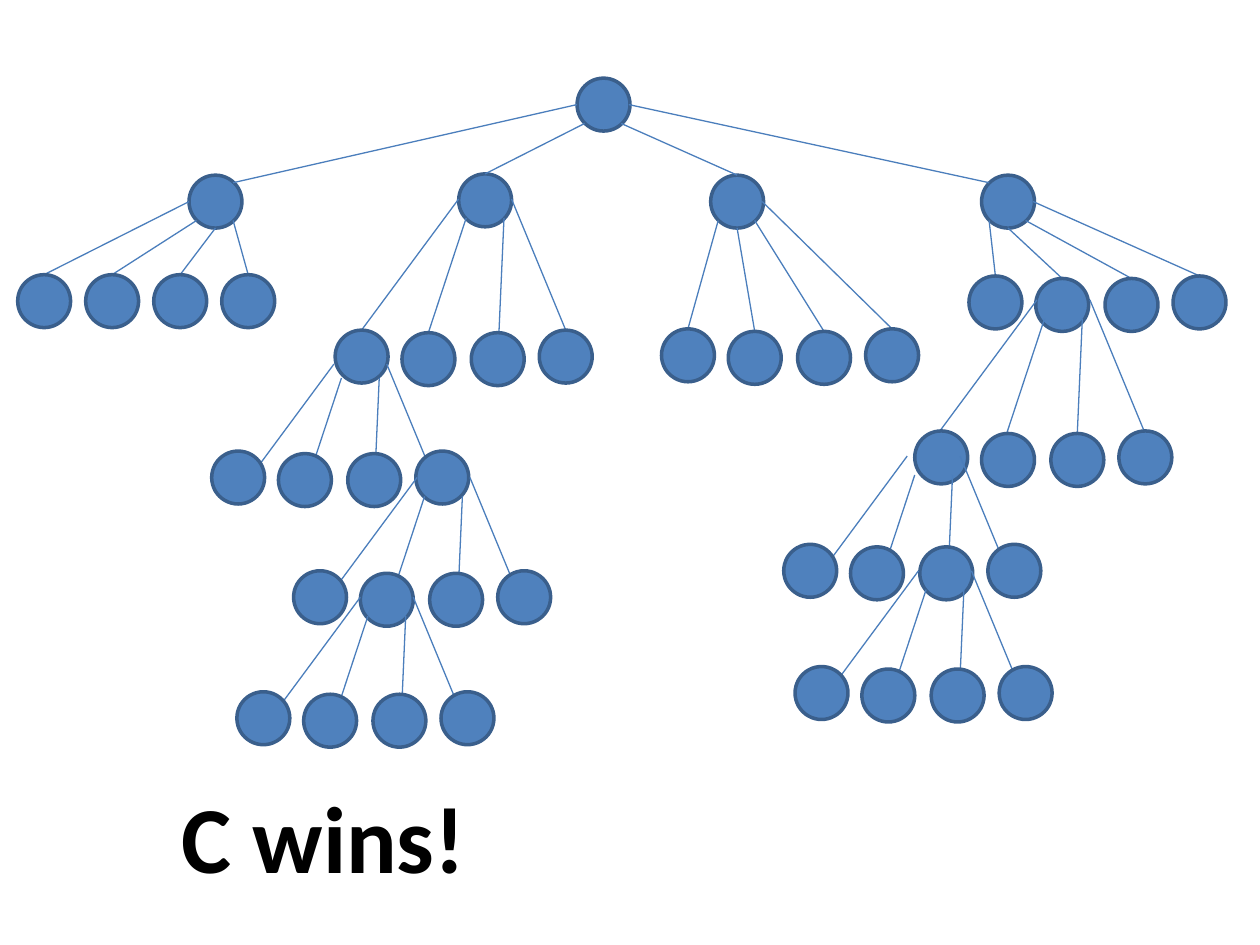
from lxml import etree
from pptx import Presentation
from pptx.dml.color import RGBColor
from pptx.enum.shapes import MSO_CONNECTOR, MSO_SHAPE
from pptx.enum.text import MSO_AUTO_SIZE
from pptx.oxml.ns import qn
from pptx.util import Pt

OVAL = MSO_SHAPE.OVAL
LINE = MSO_CONNECTOR.STRAIGHT
GROW = MSO_AUTO_SIZE.SHAPE_TO_FIT_TEXT

PX = 9144  # 100 px to the inch
SIZE = 42

# Points on a node's rim, from its top left corner
TOP, TOP_L, TOP_R = (21, 0), (6, 6), (35, 6)
LEFT, LOW_L, LOW, LOW_R, RIGHT = (0, 21), (6, 36), (21, 42), (35, 36), (41, 21)

ROOT = (458, 62)
HEADS = [(150, 139), (364, 138), (564, 139), (779, 139)]
FIRST = [(14, 218), (266, 262), (525, 261), (769, 219)]

# Start of a fan, drop of its inner lines, first node of the row below
DEEP = [
    ((265, 289), 11, (168, 358)),
    ((331, 379), 15, (233, 453)),
    ((286, 474), 15, (188, 549)),
    ((823, 238), 15, (726, 342)),
    ((720, 362), 15, (622, 432)),
    ((729, 453), 15, (631, 529)),
]


def hue(code):
    return RGBColor.from_string(code)


def shift(spot, step):
    return spot[0] + step[0], spot[1] + step[1]


def even(spot):
    return [shift(spot, (54 * i, 0)) for i in range(4)]


def wavy(spot):
    """Four nodes with the middle pair set a little lower."""
    return [shift(spot, step) for step in ((0, 0), (53, 2), (108, 2), (162, 0))]


class Board:
    FILL, RIM, EDGE, INK = "4F81BD", "3A5F8C", "4B7EBC", "000000"
    FONT = "Calibri"

    def __init__(self, slide):
        self.shapes = slide.shapes

    def node(self, spot):
        x, y = spot
        dot = self.shapes.add_shape(OVAL, x * PX, y * PX, SIZE * PX, SIZE * PX)
        dot.shadow.inherit = False
        dot.fill.solid()
        dot.fill.fore_color.rgb = hue(self.FILL)
        dot.line.color.rgb = hue(self.RIM)
        dot.line.width = Pt(2)

    def row(self, spots):
        for spot in spots:
            self.node(spot)

    def edge(self, start, end):
        ends = [value * PX for value in start + end]
        line = self.shapes.add_connector(LINE, *ends)
        line.line.color.rgb = hue(self.EDGE)
        line.line.width = Pt(0.75)
        etree.SubElement(line._element.spPr, qn("a:effectLst"))

    def link(self, head, sites, kids):
        """Lines from points on the head to the tops of its children."""
        for site, kid in zip(sites, kids):
            self.edge(shift(head, site), shift(kid, TOP))

    def fan(self, start, drop):
        """Four lines below a node: a wide outer pair and an inner pair."""
        for begin, move in (
            ((0, 0), (-77, 104)),
            ((6, drop), (-30, 91)),
            ((42, 0), (43, 104)),
            ((36, drop), (-4, 91)),
        ):
            spot = shift(start, begin)
            self.edge(spot, shift(spot, move))

    def label(self, x, y, wide, high, text, size):
        frame = self.shapes.add_textbox(x * PX, y * PX, wide * PX, high * PX).text_frame
        frame.word_wrap = True
        frame.auto_size = GROW
        frame.text = text
        font = frame.paragraphs[0].runs[0].font
        font.name, font.size, font.bold = self.FONT, Pt(size), True
        font.color.rgb = hue(self.INK)


def main():
    deck = Presentation()
    deck.slide_width, deck.slide_height = 1000 * PX, 750 * PX
    board = Board(deck.slides.add_slide(deck.slide_layouts[6]))

    rows = [even(FIRST[0])] + [wavy(spot) for spot in FIRST[1:]]
    board.row([ROOT] + HEADS)
    joins = zip((LEFT, LOW_L, LOW_R, RIGHT), HEADS, (TOP_R, TOP, TOP, TOP_L))
    for site, head, end in joins:
        board.edge(shift(ROOT, site), shift(head, end))
    board.link(HEADS[0], (LEFT, LOW_L, LOW, LOW_R), rows[0])
    board.fan((364, 158), 15)
    for i in (2, 3):
        board.link(HEADS[i], (LOW_L, LOW, LOW_R, RIGHT), rows[i])
    for row in rows:
        board.row(row)

    for start, drop, spot in DEEP:
        board.fan(start, drop)
        board.row(wavy(spot))

    board.label(134, 613, 275, 101, "C wins!", 54)
    deck.save("out.pptx")


if __name__ == "__main__":
    main()
